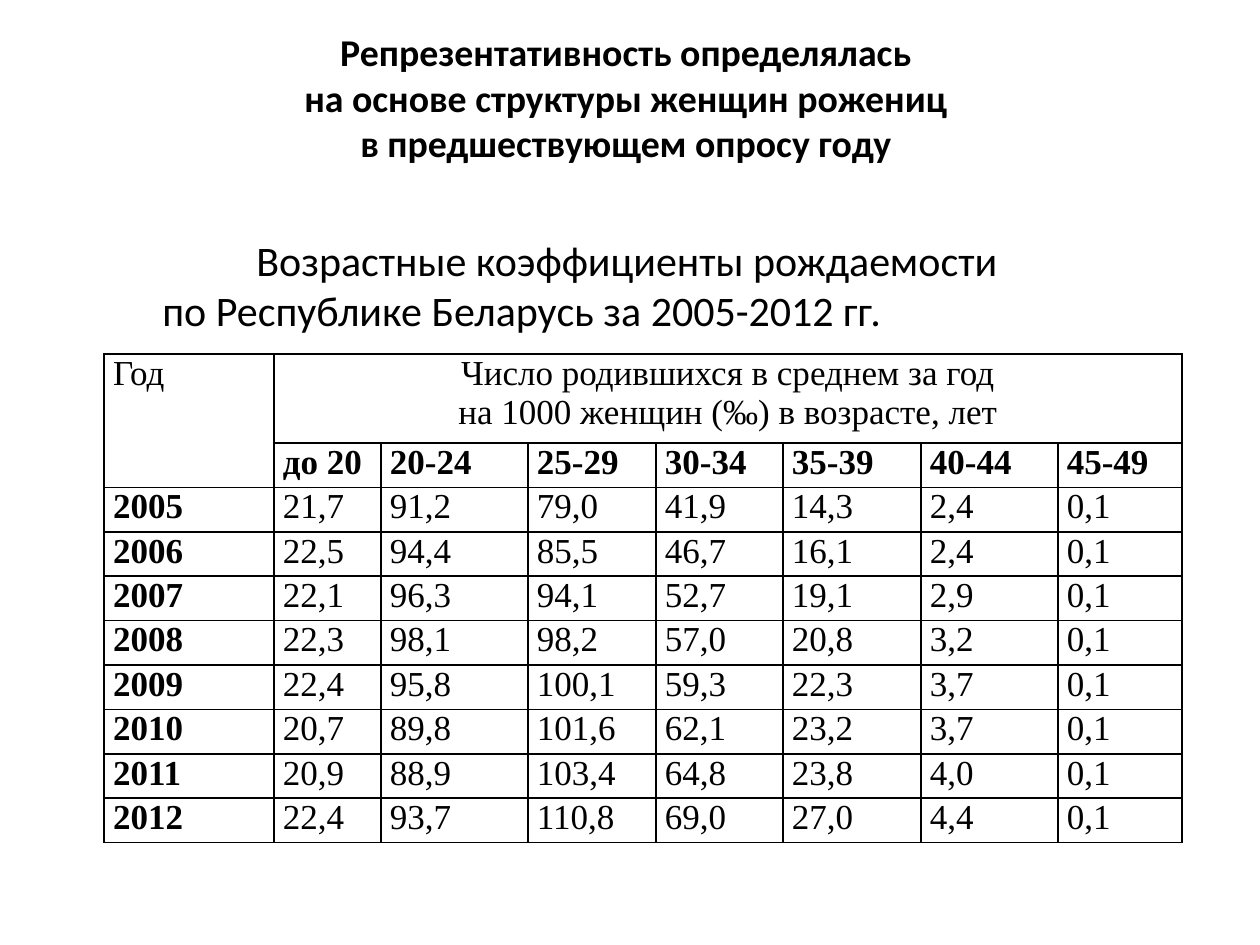
"""Builds a slide with a table of age-specific birth rates."""
from pptx import Presentation
from pptx.dml.color import RGBColor
from pptx.enum.text import MSO_ANCHOR as Anchor, PP_ALIGN as Align
from pptx.oxml.ns import qn
from pptx.util import Pt
from lxml.etree import SubElement

TITLE = ("Репрезентативность определялась\v"
         "на основе структуры женщин рожениц\v"
         "в предшествующем опросу году")
CAPTION = ["Возрастные коэффициенты рождаемости",
           "по Республике Беларусь за 2005-2012 гг."]
CORNER = "Год"
HEAD = "Число родившихся в среднем за год\nна 1000 женщин (‰) в возрасте, лет"
AGES = ["до 20", "20-24", "25-29", "30-34", "35-39", "40-44", "45-49"]
RATES = {
    "2005": ["21,7", "91,2", "79,0", "41,9", "14,3", "2,4", "0,1"],
    "2006": ["22,5", "94,4", "85,5", "46,7", "16,1", "2,4", "0,1"],
    "2007": ["22,1", "96,3", "94,1", "52,7", "19,1", "2,9", "0,1"],
    "2008": ["22,3", "98,1", "98,2", "57,0", "20,8", "3,2", "0,1"],
    "2009": ["22,4", "95,8", "100,1", "59,3", "22,3", "3,7", "0,1"],
    "2010": ["20,7", "89,8", "101,6", "62,1", "23,2", "3,7", "0,1"],
    "2011": ["20,9", "88,9", "103,4", "64,8", "23,8", "4,0", "0,1"],
    "2012": ["22,4", "93,7", "110,8", "69,0", "27,0", "4,4", "0,1"],
}
WIDTHS = [170, 107, 147, 128, 127, 138, 137, 124]
LEFT, TOP, HEIGHT, HEAD_H = 104, 354, 489, 89
THEME = {"ink": "000000", "sans": "Calibri", "serif": "Times New Roman",
         "title": 21.6, "caption": 24, "cell": 20, "line": 1}


def px(n):
    return round(n * 914400 / 126)


def style(frame, face, size, align, bold=False):
    for para in frame.paragraphs:
        para.alignment = align
        for run in para.runs:
            font = run.font
            font.name, font.size, font.bold = THEME[face], Pt(THEME[size]), bold
            font.color.rgb = RGBColor.from_string(THEME["ink"])


def add_text(slide, spot, text, size, bold=False):
    frame = slide.shapes.add_textbox(*map(px, spot)).text_frame
    frame.word_wrap = True
    frame.text = text
    style(frame, "sans", size, Align.CENTER, bold)
    return frame


def add_border(cell):
    props = cell._tc.get_or_add_tcPr()
    for side in ("lnL", "lnR", "lnT", "lnB"):
        line = SubElement(props, qn("a:" + side), w=str(Pt(THEME["line"])))
        fill = SubElement(line, qn("a:solidFill"))
        SubElement(fill, qn("a:srgbClr"), val=THEME["ink"])


def add_rates(slide):
    rows = [[CORNER, HEAD] + [""] * 6, [""] + AGES]
    rows += [[year] + vals for year, vals in RATES.items()]
    table = slide.shapes.add_table(len(rows), len(WIDTHS), px(LEFT), px(TOP),
                                   px(sum(WIDTHS)), px(HEIGHT)).table
    table.first_row = table.horz_banding = False
    for col, width in zip(table.columns, WIDTHS):
        col.width = px(width)
    for r, row in enumerate(rows):
        table.rows[r].height = px((HEIGHT - HEAD_H) / (len(rows) - 1) if r else HEAD_H)
        for c, text in enumerate(row):
            cell = table.cell(r, c)
            cell.margin_left = cell.margin_right = px(9)
            cell.margin_top = cell.margin_bottom = 0
            cell.text_frame.text = text
            align = Align.CENTER if text == HEAD else Align.JUSTIFY
            bold = r == 1 or (r > 1 and c == 0)
            style(cell.text_frame, "serif", "cell", align, bold)
            add_border(cell)
            cell.fill.background()
    table.cell(0, 0).merge(table.cell(1, 0))
    table.cell(0, 1).merge(table.cell(0, len(WIDTHS) - 1))


def main():
    deck = Presentation()
    deck.slide_width, deck.slide_height = px(1260), px(945)
    slide = deck.slides.add_slide(deck.slide_layouts[6])
    title = add_text(slide, (59, 38, 1134, 158), TITLE, "title", True)
    title.vertical_anchor = Anchor.MIDDLE
    title.margin_top, title.margin_bottom = 0, px(40)
    caption = add_text(slide, (60, 228, 1134, 118), "\n".join(CAPTION), "caption")
    last = caption.paragraphs[-1]
    last.alignment = Align.LEFT
    last._p.get_or_add_pPr().set("marL", str(px(90)))
    add_rates(slide)
    deck.save("out.pptx")


if __name__ == "__main__":
    main()
